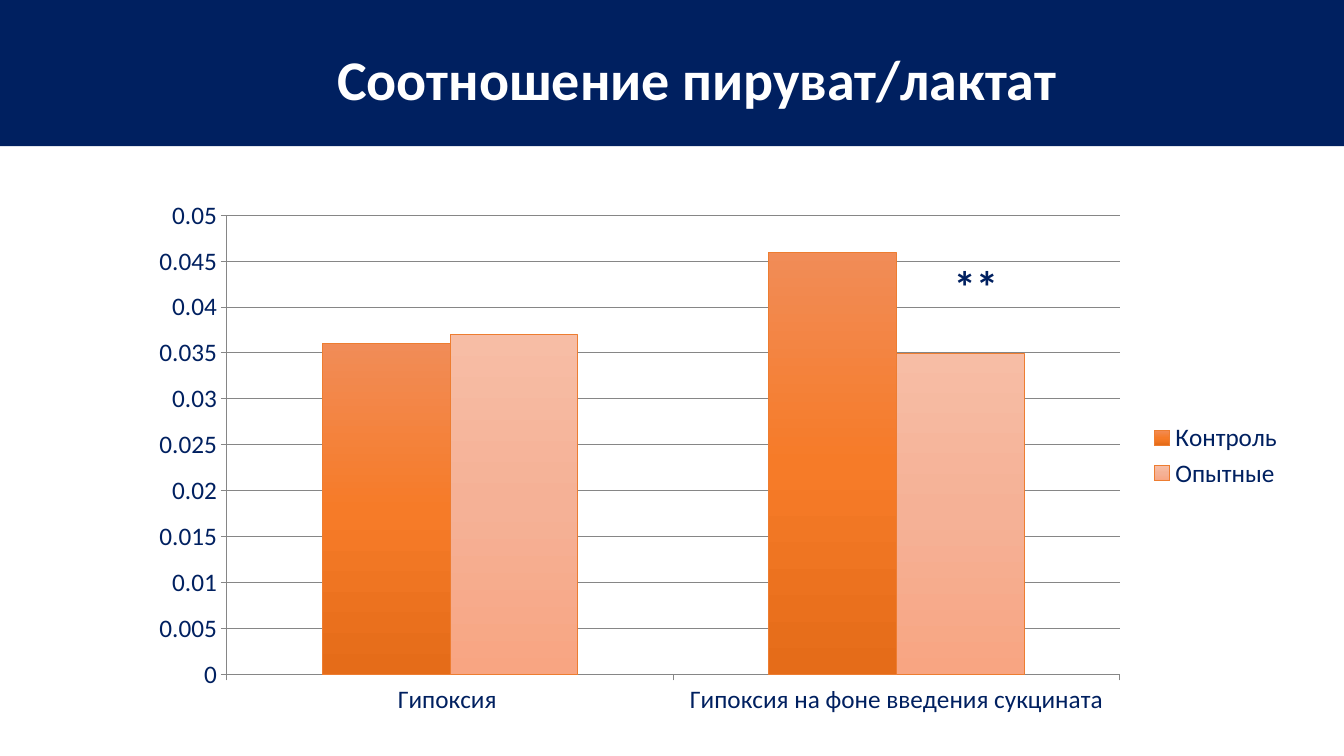
from copy import deepcopy

from lxml.etree import SubElement
from pptx import Presentation
from pptx.chart.data import CategoryChartData
from pptx.dml.color import RGBColor
from pptx.enum.chart import XL_CHART_TYPE, XL_LEGEND_POSITION, XL_TICK_MARK
from pptx.enum.text import MSO_ANCHOR, MSO_AUTO_SIZE, PP_ALIGN
from pptx.oxml.ns import qn
from pptx.util import Inches, Pt

TITLE = "Соотношение пируват/лактат"
SIGNIFICANCE = "**"
CATEGORIES = ["Гипоксия ", "Гипоксия на фоне введения сукцината"]
SERIES = [
    ("Контроль", [0.036, 0.046], ["F18C57", "F67B28", "E56C19"]),
    ("Опытные", [0.037, 0.035], ["F7BDA5", "F5B196", "F8A582"]),
]
COLORS = {"navy": "002060", "white": "FFFFFF", "outline": "ED7D31", "grid": "868686"}
PLOT_LAYOUT = {"x": 0.08, "y": 0.05, "w": 0.77, "h": 0.86}
FONT = "Calibri"


def color(name):
    return RGBColor.from_string(COLORS[name])


def style_font(font, size, color_name, bold=False):
    font.name = FONT
    font.size = Pt(size)
    font.bold = bold
    font.color.rgb = color(color_name)


def add_title(slide):
    title = slide.shapes.title
    title.left, title.top = 0, 0
    title.width, title.height = Inches(13.33), Inches(1.45)
    title.fill.solid()
    title.fill.fore_color.rgb = color("navy")
    frame = title.text_frame
    frame.text = TITLE
    frame.auto_size = MSO_AUTO_SIZE.NONE
    frame.vertical_anchor = MSO_ANCHOR.MIDDLE
    frame.margin_left = Inches(0.59)
    paragraph = frame.paragraphs[0]
    paragraph.alignment = PP_ALIGN.CENTER
    paragraph.line_spacing = 1.15
    style_font(paragraph.font, 40, "white", bold=True)


def fill_gradient(series, shades):
    """Fill the columns from top to bottom with evenly spaced shades."""
    fill = series.format.fill
    fill.gradient()
    fill.gradient_angle = 270
    stop_list = next(series._element.iter(qn("a:gsLst")))
    while len(stop_list) < len(shades):
        stop_list.append(deepcopy(stop_list[0]))
    for index, (stop, shade) in enumerate(zip(fill.gradient_stops, shades)):
        stop.position = index / (len(shades) - 1)
        stop.color.rgb = RGBColor.from_string(shade)


def place_plot(chart):
    """Fix the inner plot area as fractions of the chart frame."""
    plot_area = next(chart._chartSpace.iter(qn("c:plotArea")))
    for layout in plot_area.findall(qn("c:layout")):
        plot_area.remove(layout)
    layout = SubElement(plot_area, qn("c:layout"))
    plot_area.insert(0, layout)
    manual = SubElement(layout, qn("c:manualLayout"))
    settings = {"layoutTarget": "inner", "xMode": "edge", "yMode": "edge", **PLOT_LAYOUT}
    for tag, value in settings.items():
        SubElement(manual, qn(f"c:{tag}")).set("val", str(value))


def add_ratio_chart(slide):
    data = CategoryChartData()
    data.categories = CATEGORIES
    for name, values, _ in SERIES:
        data.add_series(name, values)
    chart = slide.shapes.add_chart(
        XL_CHART_TYPE.COLUMN_CLUSTERED,
        Inches(1.33), Inches(1.87), Inches(11.5), Inches(5.3), data,
    ).chart
    style_font(chart.font, 18, "navy")
    chart.has_title = False
    chart.has_legend = True
    chart.legend.position = XL_LEGEND_POSITION.RIGHT
    chart.legend.include_in_layout = False
    style_font(chart.legend.font, 18, "navy")

    plot = chart.plots[0]
    plot.gap_width = 150
    plot.overlap = 0
    plot.vary_by_categories = False
    for series, (_, _, shades) in zip(plot.series, SERIES):
        fill_gradient(series, shades)
        series.format.line.color.rgb = color("outline")
        series.format.line.width = Pt(0.5)

    value_axis = chart.value_axis
    value_axis.minimum_scale, value_axis.maximum_scale = 0, 0.05
    value_axis.major_unit = 0.005
    value_axis.has_major_gridlines = True
    for axis in (chart.category_axis, value_axis):
        axis.major_tick_mark = XL_TICK_MARK.OUTSIDE
        style_font(axis.tick_labels.font, 18, "navy")
    for part in (chart.category_axis, value_axis, value_axis.major_gridlines):
        part.format.line.color.rgb = color("grid")
        part.format.line.width = Pt(0.75)
    place_plot(chart)


def add_significance_mark(slide):
    box = slide.shapes.add_textbox(Inches(9.36), Inches(2.52), Inches(0.65), Inches(0.64))
    frame = box.text_frame
    frame.word_wrap = False
    frame.auto_size = MSO_AUTO_SIZE.SHAPE_TO_FIT_TEXT
    frame.text = SIGNIFICANCE
    style_font(frame.paragraphs[0].font, 32, "navy", bold=True)


def main():
    presentation = Presentation()
    presentation.slide_width, presentation.slide_height = Inches(13.33), Inches(7.5)
    slide = presentation.slides.add_slide(presentation.slide_layouts[5])
    add_title(slide)
    add_ratio_chart(slide)
    add_significance_mark(slide)
    presentation.save("out.pptx")


if __name__ == "__main__":
    main()
